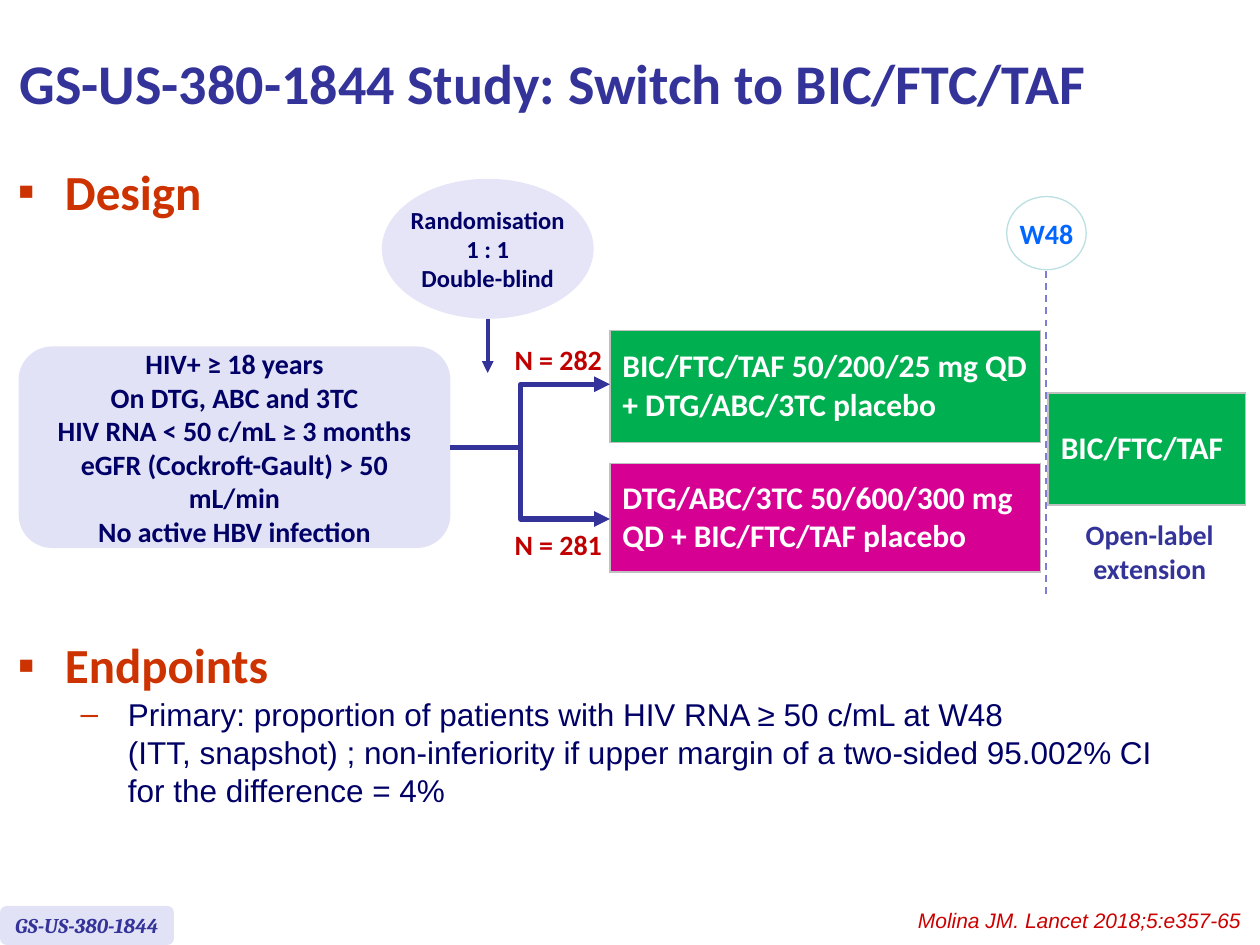
from dataclasses import dataclass

from lxml import etree
from pptx import Presentation
from pptx.dml.color import RGBColor
from pptx.enum.dml import MSO_LINE
from pptx.enum.shapes import MSO_CONNECTOR, MSO_SHAPE as Preset
from pptx.enum.text import MSO_ANCHOR as Anchor, PP_ALIGN as Align
from pptx.oxml.ns import qn
from pptx.util import Pt

NAVY, INDIGO, RUST, RED = "000066", "333399", "CC3300", "C00000"
LAVENDER, WHITE, GREEN, MAGENTA = "E2E2F6", "FFFFFF", "00B050", "D60093"


@dataclass(frozen=True)
class Box:
    left: float
    top: float
    width: float
    height: float

    def lengths(self) -> list:
        return [Pt(v) for v in (self.left, self.top, self.width, self.height)]


@dataclass(frozen=True)
class Style:
    size: float
    color: str
    bold: bool = True
    italic: bool = False
    font: str = "Calibri"
    align: Align = Align.CENTER


@dataclass(frozen=True)
class Label:
    box: Box
    text: str
    style: Style
    anchor: Anchor = Anchor.TOP
    wrap: bool = False


@dataclass(frozen=True)
class Node:
    label: Label
    preset: Preset
    fill: str
    outline: str = ""


@dataclass(frozen=True)
class Arm:
    box: Box
    text: str
    fill: str


@dataclass(frozen=True)
class Bullet:
    text: str
    mark: str
    indent: float
    style: Style
    level: int = 0


def rgb(color: str) -> RGBColor:
    return RGBColor.from_string(color)


def style_paragraph(paragraph, style: Style) -> None:
    paragraph.alignment = style.align
    for run in paragraph.runs:
        font = run.font
        font.name, font.size = style.font, Pt(style.size)
        font.bold, font.italic = style.bold, style.italic
        font.color.rgb = rgb(style.color)


def write(text_frame, label: Label) -> None:
    text_frame.text = label.text
    text_frame.word_wrap = label.wrap
    text_frame.vertical_anchor = label.anchor
    for paragraph in text_frame.paragraphs:
        style_paragraph(paragraph, label.style)


def add_label(slide, label: Label) -> None:
    write(slide.shapes.add_textbox(*label.box.lengths()).text_frame, label)


def add_node(slide, node: Node):
    shape = slide.shapes.add_shape(node.preset, *node.label.box.lengths())
    shape.shadow.inherit = False
    shape.fill.solid()
    shape.fill.fore_color.rgb = rgb(node.fill)
    if node.outline:
        shape.line.color.rgb = rgb(node.outline)
        shape.line.width = Pt(0.75)
    else:
        shape.line.fill.background()
    write(shape.text_frame, node.label)
    return shape


def add_arm(slide, arm: Arm) -> None:
    table = slide.shapes.add_table(1, 1, *arm.box.lengths()).table
    table.first_row = table.horz_banding = False
    cell = table.cell(0, 0)
    cell.text = arm.text
    cell.vertical_anchor = Anchor.MIDDLE
    style_paragraph(cell.text_frame.paragraphs[0], Style(18, WHITE, align=Align.LEFT))
    properties = cell._tc.get_or_add_tcPr()
    for side in ("a:lnL", "a:lnR", "a:lnT", "a:lnB"):
        border = etree.SubElement(properties, qn(side), w=str(Pt(1)))
        fill = etree.SubElement(border, qn("a:solidFill"))
        etree.SubElement(fill, qn("a:srgbClr"), val="C0C0C0")
    cell.fill.solid()
    cell.fill.fore_color.rgb = rgb(arm.fill)


def style_line(shape, color: str, width: float, arrows: tuple = ()) -> None:
    shape.line.color.rgb = rgb(color)
    shape.line.width = Pt(width)
    for end in arrows:
        etree.SubElement(shape.line._get_or_add_ln(), qn(end), type="triangle")


def add_line(slide, start: tuple, end: tuple, color: str, width: float, arrows: tuple = ()):
    points = [Pt(v) for v in (*start, *end)]
    connector = slide.shapes.add_connector(MSO_CONNECTOR.STRAIGHT, *points)
    style_line(connector, color, width, arrows)
    etree.SubElement(connector._element.spPr, qn("a:effectLst"))
    return connector


def add_bullets(slide, box: Box, bullets: list) -> None:
    text_frame = slide.shapes.add_textbox(*box.lengths()).text_frame
    text_frame.word_wrap = True
    for index, bullet in enumerate(bullets):
        paragraph = text_frame.add_paragraph() if index else text_frame.paragraphs[0]
        paragraph.text = bullet.text
        paragraph.level = bullet.level
        if index:
            paragraph.space_before = Pt(0.8)
        properties = paragraph._p.get_or_add_pPr()
        properties.set("marL", str(Pt(bullet.indent)))
        properties.set("indent", str(Pt(-27)))
        color = etree.SubElement(properties, qn("a:buClr"))
        etree.SubElement(color, qn("a:srgbClr"), val=RUST)
        etree.SubElement(properties, qn("a:buFont"), typeface="Arial")
        etree.SubElement(properties, qn("a:buChar"), char=bullet.mark)
        style_paragraph(paragraph, bullet.style)


def main() -> None:
    presentation = Presentation()
    presentation.slide_width, presentation.slide_height = Pt(720), Pt(540)
    slide = presentation.slides.add_slide(presentation.slide_layouts[6])

    # Title and section headings
    add_label(slide, Label(Box(4.3, 3.6, 645, 87), "GS-US-380-1844 Study: Switch to BIC/FTC/TAF",
                           Style(32, INDIGO, align=Align.LEFT), Anchor.MIDDLE, True))
    heading = Style(28, RUST, align=Align.LEFT)
    detail = Style(18, NAVY, bold=False, font="Arial", align=Align.LEFT)
    add_bullets(slide, Box(3, 88.6, 142.6, 45.4), [Bullet("Design", "▪", 27, heading)])
    add_bullets(slide, Box(3, 359.3, 687.6, 154.8), [
        Bullet("Endpoints", "▪", 27, heading),
        Bullet("Primary: proportion of patients with HIV RNA ≥ 50 c/mL at W48\v"
               "(ITT, snapshot) ; non-inferiority if upper margin of a two-sided 95.002% CI\v"
               "for the difference = 4%", "–", 63, detail, 1)])

    # Treatment arms and extension
    arm_left, arm_width = 348.5, 246.2
    for arm in (
        Arm(Box(arm_left, 188.8, arm_width, 64),
            "BIC/FTC/TAF 50/200/25 mg QD + DTG/ABC/3TC placebo", GREEN),
        Arm(Box(arm_left, 264.8, arm_width, 62),
            "DTG/ABC/3TC 50/600/300 mg QD + BIC/FTC/TAF placebo", MAGENTA),
        Arm(Box(599, 224.6, 112.6, 64), "BIC/FTC/TAF", GREEN),
    ):
        add_arm(slide, arm)

    # Population, randomisation, time point and study tag
    population = add_node(slide, Node(Label(
        Box(10.6, 198, 246.8, 115.2),
        "HIV+ ≥ 18 years\nOn DTG, ABC and 3TC\nHIV RNA < 50 c/mL ≥ 3 months\n"
        "eGFR (Cockroft-Gault) > 50 mL/min\nNo active HBV infection",
        Style(16, NAVY), Anchor.MIDDLE, True), Preset.ROUNDED_RECTANGLE, LAVENDER))
    for node in (
        Node(Label(Box(218.2, 102.2, 121, 80), "Randomisation\n1 : 1\nDouble-blind",
                   Style(14, NAVY), Anchor.MIDDLE), Preset.OVAL, "E5E5F7"),
        Node(Label(Box(575.3, 112.3, 45.4, 41.8), "W48", Style(16, "0066FF"), Anchor.MIDDLE),
             Preset.OVAL, WHITE, "BBE0E3"),
        Node(Label(Box(0, 517.7, 99.4, 22.3), "GS-US-380-1844",
                   Style(12, INDIGO, italic=True, font="Cambria"), Anchor.MIDDLE),
             Preset.ROUNDED_RECTANGLE, LAVENDER),
    ):
        add_node(slide, node)

    # Lines, with a two-headed bracket leading to the arms
    fork, upper, lower = 297.4, 219.6, 296.6
    stub = add_line(slide, (257.4, 255.6), (fork, 255.6), INDIGO, 3)
    stub.begin_connect(population, 3)
    add_line(slide, (278.7, 182.2), (278.7, 213.1), INDIGO, 2.25, ("a:tailEnd",))
    week_line = add_line(slide, (597.6, 154.8), (597.6, 342), "7E7ED4", 1)
    week_line.line.dash_style = MSO_LINE.DASH
    builder = slide.shapes.build_freeform(Pt(arm_left), Pt(upper))
    builder.add_line_segments([(Pt(fork), Pt(upper)), (Pt(fork), Pt(lower)),
                               (Pt(arm_left), Pt(lower))], close=False)
    bracket = builder.convert_to_shape()
    bracket.shadow.inherit = False
    bracket.fill.background()
    style_line(bracket, INDIGO, 3, ("a:headEnd", "a:tailEnd"))

    # Arm sizes, extension caption and reference
    for label in (
        Label(Box(286.6, 192.2, 64.8, 26.6), "N = 282", Style(16, RED)),
        Label(Box(286.6, 298.1, 64.8, 26.6), "N = 281", Style(16, RED)),
        Label(Box(612.7, 292.3, 88.6, 46), "Open-label\nextension", Style(16, INDIGO)),
        Label(Box(464.4, 514.8, 252, 21.6), "Molina JM. Lancet 2018;5:e357-65",
              Style(12, "CC0000", False, True, "Arial", Align.RIGHT), wrap=True),
    ):
        add_label(slide, label)

    presentation.save("out.pptx")


if __name__ == "__main__":
    main()
